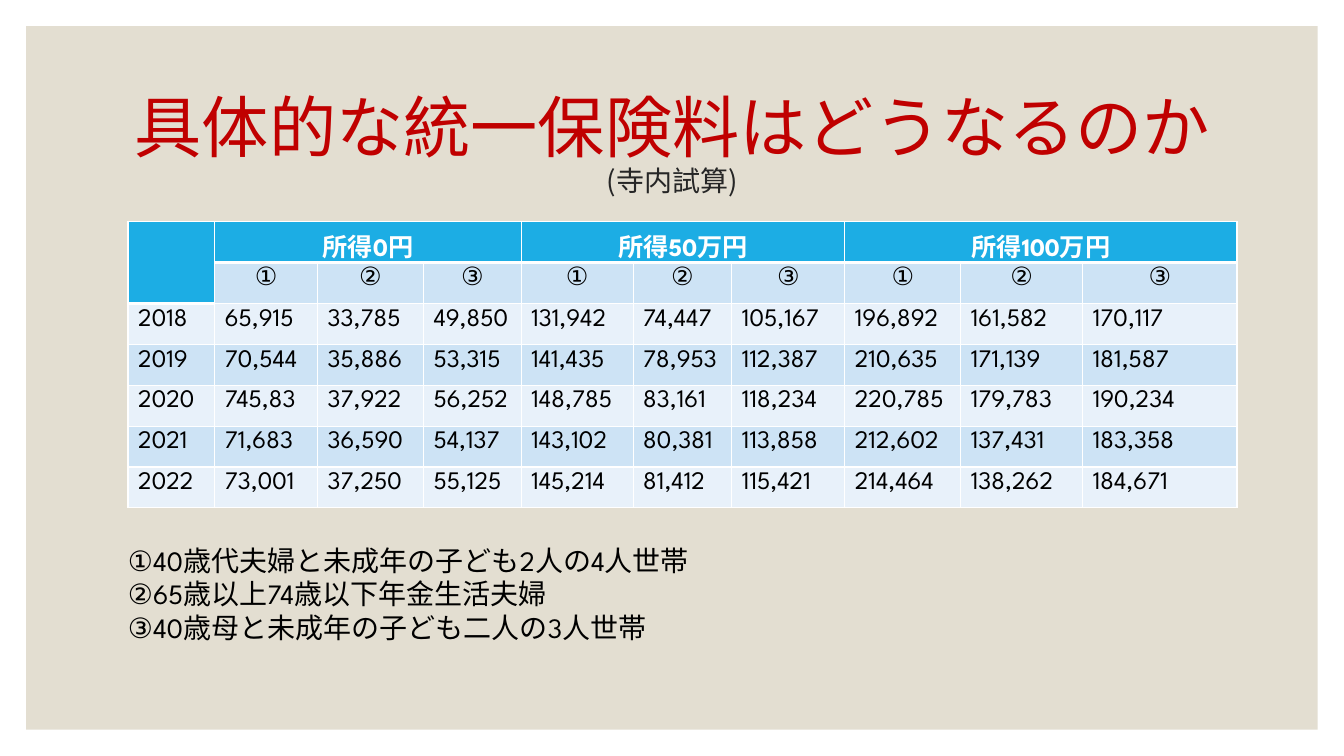
from dataclasses import dataclass

from lxml.etree import SubElement
from pptx import Presentation
from pptx.dml.color import RGBColor
from pptx.enum.shapes import MSO_SHAPE
from pptx.enum.text import MSO_ANCHOR, PP_ALIGN
from pptx.oxml.ns import qn
from pptx.util import Inches, Pt


@dataclass(frozen=True)
class Theme:
    panel: str = "E3DED1"
    title: str = "C00000"
    subtitle: str = "262626"
    header: str = "1CADE4"
    bands: tuple = ("E8F1FA", "CDE3F5")
    white: str = "FFFFFF"
    black: str = "000000"
    title_font: str = "Noto Sans CJK JP"
    body_font: str = "League Spartan"
    title_size: int = 48
    note_size: int = 20
    table_size: int = 18


THEME = Theme()
WIDTH, HEIGHT = 13.33, 7.5
MARGIN = 0.26
COLUMN_WIDTHS = (0.86, 1.02, 1.05, 0.97, 1.11, 0.98, 1.12, 1.15, 1.21, 1.53)
INCOMES = ("所得0円", "所得50万円", "所得100万円")
HOUSEHOLDS = ("①", "②", "③")
PREMIUMS = (
    "2018 65,915 33,785 49,850 131,942 74,447 105,167 196,892 161,582 170,117",
    "2019 70,544 35,886 53,315 141,435 78,953 112,387 210,635 171,139 181,587",
    "2020 745,83 37,922 56,252 148,785 83,161 118,234 220,785 179,783 190,234",
    "2021 71,683 36,590 54,137 143,102 80,381 113,858 212,602 137,431 183,358",
    "2022 73,001 37,250 55,125 145,214 81,412 115,421 214,464 138,262 184,671",
)
NOTES = (
    "①40歳代夫婦と未成年の子ども2人の4人世帯",
    "②65歳以上74歳以下年金生活夫婦",
    "③40歳母と未成年の子ども二人の3人世帯",
)


def rgb(value):
    return RGBColor.from_string(value)


def set_font(font, name, size, color, bold=False):
    font.name, font.size, font.bold = name, Pt(size), bold
    font.color.rgb = rgb(color)


def add_panel(slide, box):
    panel = slide.shapes.add_shape(MSO_SHAPE.RECTANGLE, *map(Inches, box))
    panel.shadow.inherit = False
    panel.fill.solid()
    panel.fill.fore_color.rgb = rgb(THEME.panel)
    panel.line.fill.background()


def add_text_frame(slide, box):
    frame = slide.shapes.add_textbox(*map(Inches, box)).text_frame
    frame.word_wrap = True
    return frame


def add_title(slide, box, title, subtitle):
    frame = add_text_frame(slide, box)
    frame.vertical_anchor = MSO_ANCHOR.MIDDLE
    paragraph = frame.paragraphs[0]
    paragraph.alignment = PP_ALIGN.CENTER
    paragraph.line_spacing = 0.9
    title_run = paragraph.add_run()
    title_run.text = title
    set_font(title_run.font, THEME.title_font, THEME.title_size, THEME.title)
    paragraph.add_line_break()
    subtitle_run = paragraph.add_run()
    subtitle_run.text = subtitle
    set_font(subtitle_run.font, THEME.title_font, THEME.note_size, THEME.subtitle)


def set_borders(cell, bottom_width):
    """Draw white borders; they must precede the fill in the cell properties."""
    properties = cell._tc.get_or_add_tcPr()
    for tag, width in (("a:lnL", 1), ("a:lnR", 1), ("a:lnT", 1), ("a:lnB", bottom_width)):
        line = SubElement(properties, qn(tag), w=str(Pt(width)))
        fill = SubElement(line, qn("a:solidFill"))
        SubElement(fill, qn("a:srgbClr"), val=THEME.white)


def style_cell(cell, row, column):
    is_header = row == 0 or (row == 1 and column == 0)
    set_borders(cell, 3 if is_header else 1)
    cell.fill.solid()
    cell.fill.fore_color.rgb = rgb(THEME.header if is_header else THEME.bands[row % 2])
    paragraph = cell.text_frame.paragraphs[0]
    paragraph.alignment = PP_ALIGN.CENTER if row < 2 else PP_ALIGN.LEFT
    color = THEME.white if is_header else THEME.black
    set_font(paragraph.font, THEME.body_font, THEME.table_size, color, is_header)


def add_premium_table(slide, box):
    group_size = len(HOUSEHOLDS)
    income_row = [""]
    for income in INCOMES:
        income_row += [income] + [""] * (group_size - 1)
    rows = [income_row, ["", *HOUSEHOLDS * len(INCOMES)]]
    rows += [line.split() for line in PREMIUMS]

    left, top, width, height = map(Inches, box)
    table = slide.shapes.add_table(
        len(rows), len(COLUMN_WIDTHS), left, top, width, height
    ).table
    for column, share in zip(table.columns, COLUMN_WIDTHS):
        column.width = int(width * share / sum(COLUMN_WIDTHS))
    for row, values in enumerate(rows):
        for column, value in enumerate(values):
            cell = table.cell(row, column)
            cell.text = value
            style_cell(cell, row, column)
    table.cell(0, 0).merge(table.cell(1, 0))
    for first in range(1, len(COLUMN_WIDTHS), group_size):
        table.cell(0, first).merge(table.cell(0, first + group_size - 1))


def add_notes(slide, box, notes):
    frame = add_text_frame(slide, box)
    frame.text = "\n".join(notes)
    for paragraph in frame.paragraphs:
        set_font(paragraph.font, THEME.body_font, THEME.note_size, THEME.black)


def main():
    presentation = Presentation()
    presentation.slide_width = Inches(WIDTH)
    presentation.slide_height = Inches(HEIGHT)
    slide = presentation.slides.add_slide(presentation.slide_layouts[6])
    add_panel(slide, (MARGIN, MARGIN, WIDTH - 2 * MARGIN, HEIGHT - 2 * MARGIN))
    add_title(slide, (1.17, 0.7, 11, 1.5), "具体的な統一保険料はどうなるのか", "(寺内試算)")
    add_premium_table(slide, (1.27, 2.2, 11, 2.84))
    add_notes(slide, (1.17, 5.34, 11.1, 1.11), NOTES)
    presentation.save("out.pptx")


if __name__ == "__main__":
    main()
